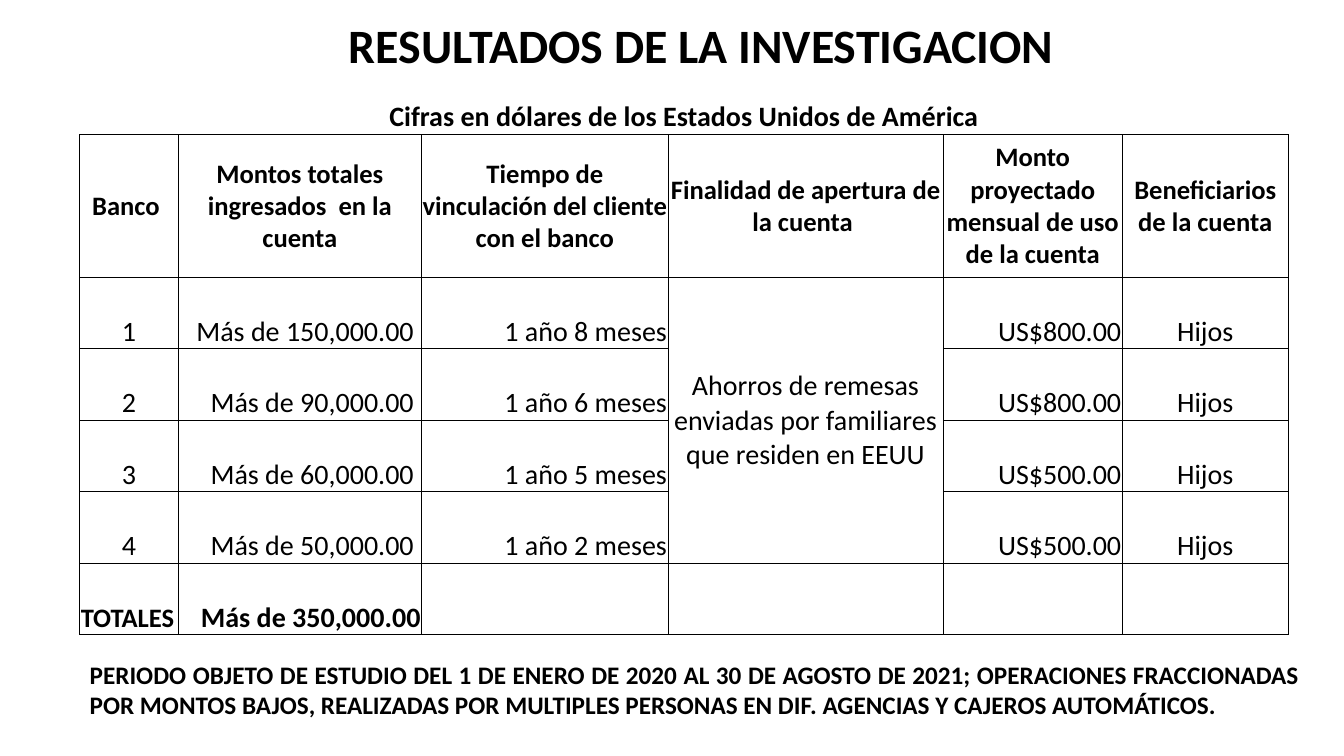
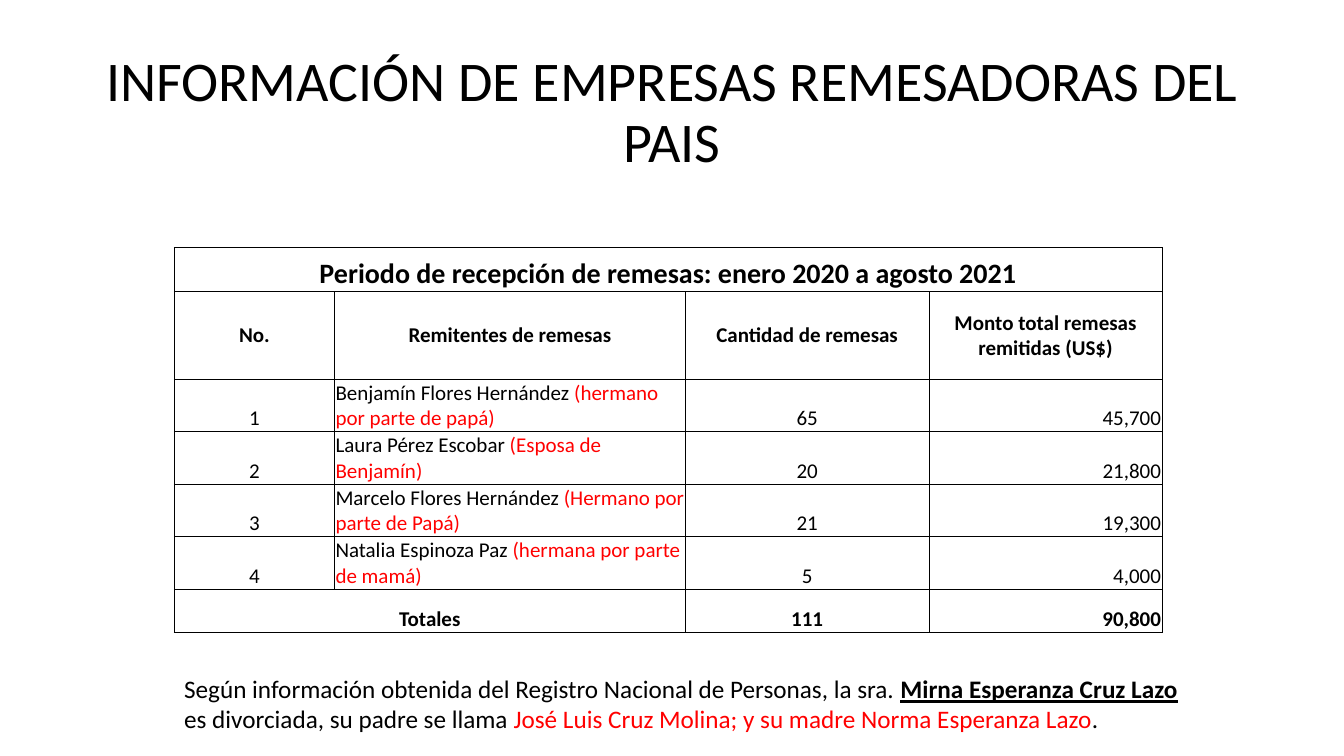
from pptx import Presentation
from pptx.dml.color import RGBColor
from pptx.enum.text import MSO_ANCHOR, PP_ALIGN
from pptx.oxml.ns import qn
from pptx.util import Pt
from lxml import etree

LEFT, MID, RIGHT, FULL = PP_ALIGN.LEFT, PP_ALIGN.CENTER, PP_ALIGN.RIGHT, PP_ALIGN.JUSTIFY
CENTER, BASE, TOP = MSO_ANCHOR.MIDDLE, MSO_ANCHOR.BOTTOM, MSO_ANCHOR.TOP
FONT = "Calibri"
INK = {"black": "000000", "red": "FF0000"}
SIDES = {"L": LEFT, "C": MID, "R": RIGHT}


def write(frame, parts, size, align, bold=False):
    para = frame.paragraphs[0]
    para.alignment = align
    for text, color, strong in parts:
        run = para.add_run()
        run.text = text
        font = run.font
        font.name, font.size = FONT, Pt(size)
        font.bold = bold or strong
        font.underline = strong
        font.color.rgb = RGBColor.from_string(INK[color])
    return para


def grid(slide, spot, cols, rows, data, sides, sizes, open_top):
    shape = slide.shapes.add_table(len(rows), len(cols), Pt(spot[0]), Pt(spot[1]),
                                   Pt(sum(cols)), Pt(sum(rows)))
    table = shape.table
    table.first_row = table.horz_banding = False
    for col, width in zip(table.columns, cols):
        col.width = Pt(width)
    last = len(rows) - 1
    for r, line in enumerate(data):
        table.rows[r].height = Pt(rows[r])
        size = sizes[min(r, 2)]
        for c in range(len(cols)):
            cell = table.cell(r, c)
            cell.margin_left = cell.margin_right = cell.margin_top = Pt(0.7)
            cell.margin_bottom = Pt(0)
            cell.vertical_anchor = CENTER if r == 1 else BASE
            props = cell._tc.get_or_add_tcPr()
            for side in "LRTB":
                edge = etree.SubElement(props, qn("a:ln" + side), w=str(Pt(0.5)))
                if open_top and r == 0 and side != "B":
                    etree.SubElement(edge, qn("a:noFill"))
                else:
                    fill = etree.SubElement(edge, qn("a:solidFill"))
                    etree.SubElement(fill, qn("a:srgbClr"), val=INK["black"])
            cell.fill.background()
            item = line[c] if c < len(line) else ""
            if item:
                name, _, kin = item.partition("|")
                parts = [(name, "black", False)]
                if kin:
                    parts.append((kin, "red", False))
                align = MID if r < 2 else SIDES[sides[c]]
                write(cell.text_frame, parts, size, align, r < 2 or r == last)
    table.cell(0, 0).merge(table.cell(0, len(cols) - 1))
    return table


deck = Presentation()
deck.slide_width, deck.slide_height = Pt(960), Pt(540)
blank = deck.slide_layouts[6]

bank, remit = [deck.slides.add_slide(blank) for _ in range(2)]

texts = [
    (bank, (87, 16.5, 828, 35.5), CENTER, 34.2, MID, True, 0.9,
     [("RESULTADOS DE LA INVESTIGACION", "black", False)]),
    (bank, (57, 467.5, 878.5, 51), TOP, 18, FULL, True, 1.0,
     [("PERIODO OBJETO DE ESTUDIO DEL 1 DE ENERO DE 2020 AL 30 DE AGOSTO DE 2021; "
       "OPERACIONES FRACCIONADAS POR MONTOS BAJOS, REALIZADAS POR MULTIPLES PERSONAS "
       "EN DIF. AGENCIAS Y CAJEROS AUTOMÁTICOS.", "black", False)]),
    (remit, (66, 29, 828, 104.5), CENTER, 40, MID, False, 0.9,
     [("INFORMACIÓN DE EMPRESAS REMESADORAS DEL PAIS", "black", False)]),
    (remit, (124.5, 477.5, 740, 51), TOP, 18, LEFT, False, 1.0,
     [("Según información obtenida del Registro Nacional de Personas, la sra. ", "black", False),
      ("Mirna Esperanza Cruz Lazo", "black", True),
      (" es divorciada, su padre se llama ", "black", False),
      ("José Luis Cruz Molina; y su madre Norma Esperanza Lazo", "red", False),
      (".", "black", False)]),
]
for slide, box, anchor, size, align, bold, space, parts in texts:
    frame = slide.shapes.add_textbox(*[Pt(v) for v in box]).text_frame
    frame.word_wrap = True
    frame.vertical_anchor = anchor
    write(frame, parts, size, align, bold).line_spacing = space

banks = [
    ["Cifras en dólares de los Estados Unidos de América"],
    ["Banco ", "Montos totales ingresados  en la cuenta",
     "Tiempo de vinculación del cliente con el banco",
     "Finalidad de apertura de la cuenta ",
     "Monto proyectado mensual de uso de la cuenta", "Beneficiarios de la cuenta"],
    ["1", "Más de 150,000.00", "1 año 8 meses",
     "Ahorros de remesas enviadas por familiares que residen en EEUU", "US$800.00", "Hijos"],
    ["2", "Más de 90,000.00", "1 año 6 meses", "", "US$800.00", "Hijos"],
    ["3", "Más de 60,000.00", "1 año 5 meses", "", "US$500.00", "Hijos"],
    ["4", "Más de 50,000.00", "1 año 2 meses", "", "US$500.00", "Hijos"],
    ["TOTALES", "Más de 350,000.00"],
]
table = grid(bank, (57, 66.8), [70.2, 174, 176, 196.5, 128, 118.5],
             [29.2, 102] + [51.1] * 5, banks, "CRRCRC", (20, 19, 20), True)
goal = table.cell(2, 3)
goal.merge(table.cell(5, 3))
goal.vertical_anchor = CENTER
for r in range(2, 6):
    table.cell(r, 1).margin_right = Pt(5.5)
label = table.cell(6, 0).text_frame.paragraphs[0]
label.alignment = LEFT
label.runs[0].font.size = Pt(19)

sums = [
    ["Periodo de recepción de remesas: enero 2020 a agosto 2021"],
    ["No.", "Remitentes de remesas", "Cantidad de remesas", "Monto total remesas remitidas (US$)"],
    ["1", "Benjamín Flores Hernández |(hermano por parte de papá)", "65", "45,700"],
    ["2", "Laura Pérez Escobar |(Esposa de Benjamín)", "20", "21,800"],
    ["3", "Marcelo Flores Hernández |(Hermano por parte de Papá)", "21", "19,300"],
    ["4", "Natalia Espinoza Paz |(hermana por parte de mamá)", "5", "4,000"],
    ["Totales", "", "111", "90,800"],
]
table = grid(remit, (124.5, 177), [114.5, 250.5, 174.2, 166.3],
             [31.2, 62.6] + [37.5] * 4 + [31.2], sums, "CLCR", (20, 15, 15), False)
table.cell(6, 0).merge(table.cell(6, 1))

deck.save("out.pptx")
